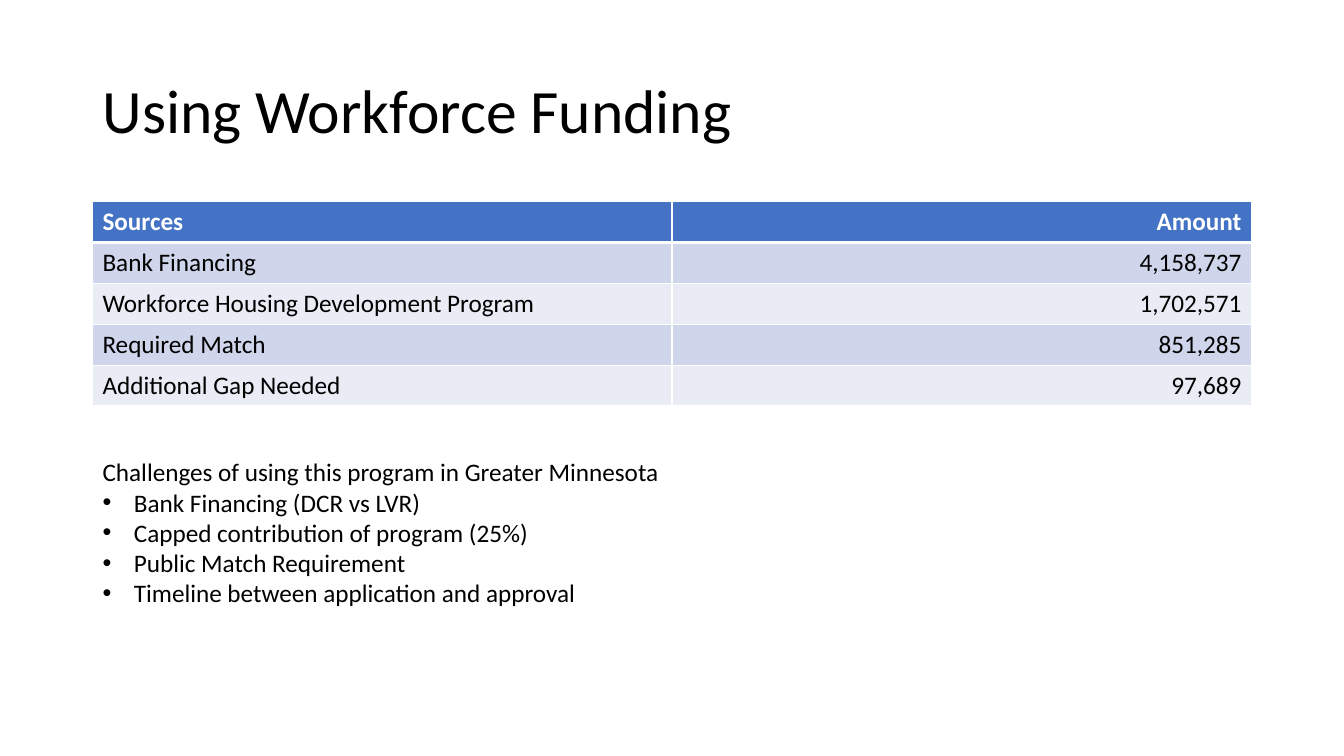
from lxml.etree import SubElement
from pptx import Presentation
from pptx.dml.color import RGBColor
from pptx.enum.text import MSO_ANCHOR, MSO_AUTO_SIZE, PP_ALIGN
from pptx.oxml.ns import qn
from pptx.util import Cm, Pt

FONT = "Calibri"
BLACK, WHITE, BLUE = "000000", "FFFFFF", "4472C4"
BANDS = ["CFD5EA", "E9EBF5"]
LEFT, WIDTH = 2.33, 29.21

SOURCES = [
    ("Sources", "Amount"),
    ("Bank Financing", "4,158,737"),
    ("Workforce Housing Development Program", "1,702,571"),
    ("Required Match", "851,285"),
    ("Additional Gap Needed", "97,689"),
]
HEADING = "Challenges of using this program in Greater Minnesota"
ISSUES = [
    "Bank Financing (DCR vs LVR)",
    "Capped contribution of program (25%)",
    "Public Match Requirement",
    "Timeline between application and approval",
]


def color(code):
    return RGBColor.from_string(code)


def style(para, size, code=BLACK, bold=False):
    for run in para.runs:
        font = run.font
        font.name, font.size, font.bold = FONT, Pt(size), bold
        font.color.rgb = color(code)


def place(shape, box):
    shape.left, shape.top, shape.width, shape.height = map(Cm, box)


def border(cell, side, width):
    line = SubElement(cell._tc.get_or_add_tcPr(), qn(f"a:ln{side}"), w=str(Pt(width)))
    fill = SubElement(line, qn("a:solidFill"))
    SubElement(fill, qn("a:srgbClr"), val=WHITE)


def bullet(para, indent):
    """Set a hanging indent in cm, with a bullet unless it is zero."""
    props = para._p.get_or_add_pPr()
    props.set("marL", str(Cm(indent)))
    props.set("indent", str(-Cm(indent)))
    if indent:
        SubElement(props, qn("a:buFont"), typeface="Arial")
        SubElement(props, qn("a:buChar"), char="•")
    else:
        SubElement(props, qn("a:buNone"))


def add_title(slide, box):
    title = slide.shapes.title
    place(title, box)
    frame = title.text_frame
    frame.text = "Using Workforce Funding"
    frame.vertical_anchor = MSO_ANCHOR.MIDDLE
    para = frame.paragraphs[0]
    para.alignment = PP_ALIGN.LEFT
    para.line_spacing = 0.9
    style(para, 44)


def add_sources(slide, box):
    rows, cols = len(SOURCES), len(SOURCES[0])
    table = slide.shapes.add_table(rows, cols, *map(Cm, box)).table
    for r, texts in enumerate(SOURCES):
        head = r == 0
        for c, text in enumerate(texts):
            cell = table.cell(r, c)
            cell.text = text
            para = cell.text_frame.paragraphs[0]
            para.alignment = PP_ALIGN.RIGHT if c else PP_ALIGN.LEFT
            style(para, 18, WHITE if head else BLACK, head)
            for side in "LRTB":
                thick = (head and side == "B") or (r == 1 and side == "T")
                border(cell, side, 3 if thick else 1)
            cell.fill.solid()
            cell.fill.fore_color.rgb = color(BLUE if head else BANDS[(r - 1) % 2])


def add_issues(slide, box):
    body = slide.placeholders[1]
    place(body, box)
    frame = body.text_frame
    frame.text = "\n".join([HEADING] + ISSUES)
    frame.word_wrap = True
    frame.auto_size = MSO_AUTO_SIZE.SHAPE_TO_FIT_TEXT
    frame.vertical_anchor = MSO_ANCHOR.TOP
    for i, para in enumerate(frame.paragraphs):
        bullet(para, 0.79 if i else 0)
        para.space_before = Pt(0)
        style(para, 18)


def main():
    deck = Presentation()
    deck.slide_width, deck.slide_height = Cm(33.87), Cm(19.05)
    slide = deck.slides.add_slide(deck.slide_layouts[1])
    add_title(slide, (LEFT, 1.01, WIDTH, 3.68))
    add_sources(slide, (LEFT, 5.08, WIDTH, 5.15))
    add_issues(slide, (LEFT, 11.38, WIDTH, 4.1))
    deck.save("out.pptx")


if __name__ == "__main__":
    main()
